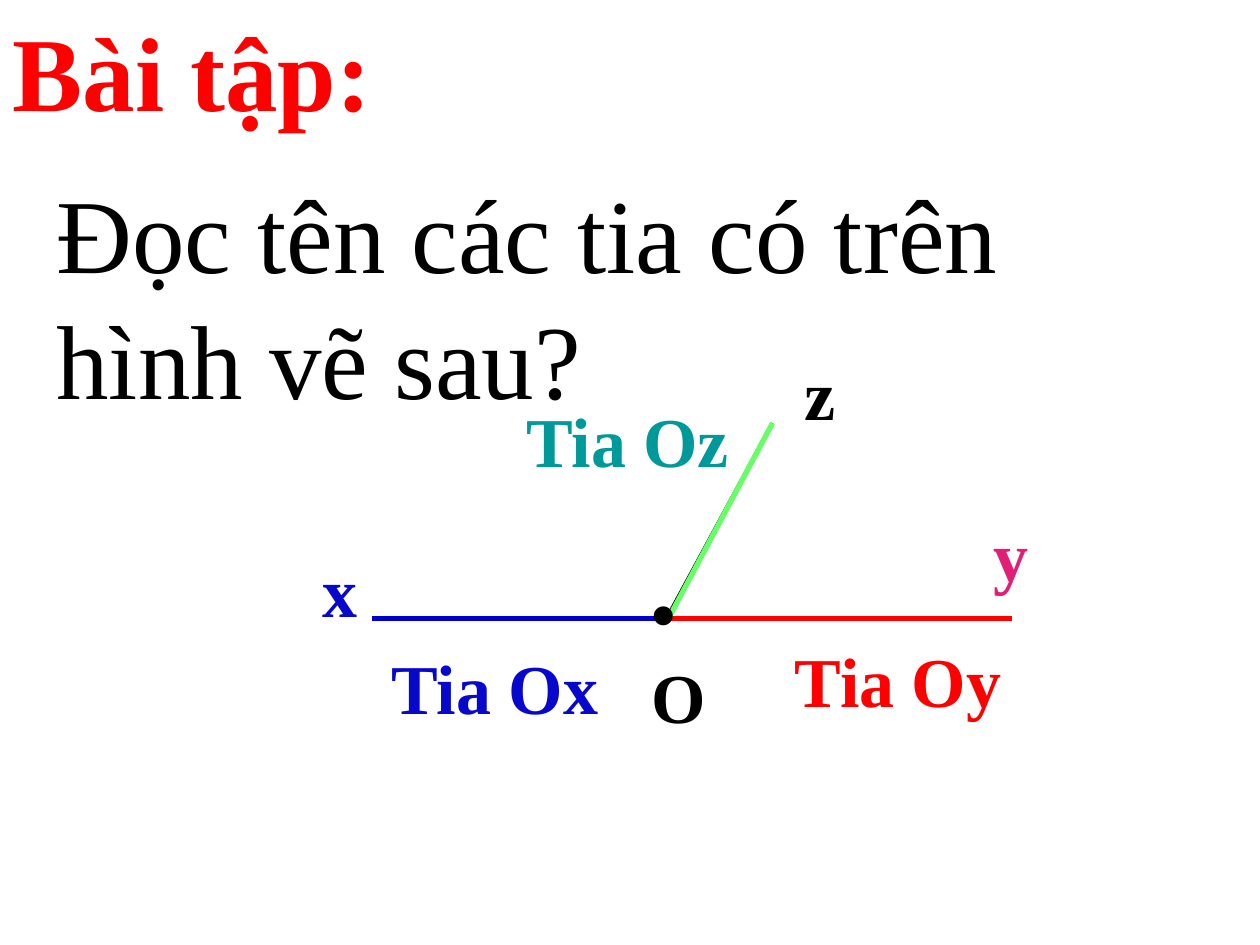
"""Build the geometry exercise slide about naming the rays Ox, Oy and Oz."""
from lxml import etree
from pptx import Presentation
from pptx.dml.color import RGBColor
from pptx.enum.shapes import MSO_CONNECTOR
from pptx.enum.text import MSO_ANCHOR, MSO_AUTO_SIZE, PP_ALIGN
from pptx.oxml.ns import qn
from pptx.util import Inches, Pt

BLACK = RGBColor(0x00, 0x00, 0x00)
WHITE = RGBColor(0xFF, 0xFF, 0xFF)
RED = RGBColor(0xFF, 0x00, 0x00)
BLUE = RGBColor(0x08, 0x07, 0xCC)
RAY_BLUE = RGBColor(0x00, 0x00, 0xCC)
PINK = RGBColor(0xE1, 0x1F, 0x77)
TEAL = RGBColor(0x00, 0x99, 0x99)
GREEN = RGBColor(0x66, 0xFF, 0x66)


def write(sp, lines, size, color, bold=True, wrap=True, anchor=MSO_ANCHOR.MIDDLE):
    tf = sp.text_frame
    frame_format = {"word_wrap": wrap, "vertical_anchor": anchor,
                    "auto_size": MSO_AUTO_SIZE.SHAPE_TO_FIT_TEXT}
    for name, value in frame_format.items():
        setattr(tf, name, value)
    tf.text = "\n".join(lines)
    font_format = {"name": "Times New Roman", "size": Pt(size), "bold": bold}
    for p in tf.paragraphs:
        p.alignment = PP_ALIGN.LEFT
        for r in p.runs:
            for name, value in font_format.items():
                setattr(r.font, name, value)
            r.font.color.rgb = color


prs = Presentation()
prs.slide_width, prs.slide_height = Inches(10), Inches(7.5)
s = prs.slides.add_slide(prs.slide_layouts[5])

title = s.shapes.title
title_box = {"left": 0, "top": 0, "width": 4.37, "height": 1.11}
for name, value in title_box.items():
    setattr(title, name, Inches(value))
title.fill.solid()
title.fill.fore_color.rgb = WHITE
write(title, ["Bài tập:"], 60, RED, anchor=MSO_ANCHOR.TOP)

rays = [
    (3.01, 4.91, 8.03, 4.91, BLACK, 2.25),
    (5.28, 4.93, 6.13, 3.36, BLACK, 2.25),
    (2.95, 4.91, 5.79, 4.91, RAY_BLUE, 3),
    (5.28, 4.91, 8.03, 4.91, RED, 3),
    (5.31, 4.9, 6.13, 3.36, GREEN, 3),
]
for x1, y1, x2, y2, color, width in rays:
    ray = s.shapes.add_connector(
        MSO_CONNECTOR.STRAIGHT, Inches(x1), Inches(y1), Inches(x2), Inches(y2))
    ray.line.color.rgb = color
    ray.line.width = Pt(width)
    etree.SubElement(ray._element.spPr, qn("a:effectLst"))

labels = [
    ("x", 2.46, 4.29, 0.48, BLUE),
    ("y", 7.79, 4.01, 0.48, PINK),
    ("z", 6.29, 2.73, 0.45, BLACK),
    ("Tia Ox", 3.01, 5.06, 1.86, BLUE),
    ("Tia Oy", 6.21, 5.01, 1.86, RED),
    ("Tia Oz", 4.08, 3.1, 1.83, TEAL),
]
for text, left, top, width, color in labels:
    label = s.shapes.add_textbox(Inches(left), Inches(top), Inches(width), Inches(0.77))
    write(label, [text], 40, color, wrap=False)

origin = s.shapes.add_textbox(Inches(5.07), Inches(4.46), Inches(0.5), Inches(1.45))
write(origin, ["•", "O"], 40, BLACK)

question = s.shapes.add_textbox(Inches(0.35), Inches(1.29), Inches(9.06), Inches(2.12))
write(question, ["Đọc tên các tia có trên hình vẽ sau?"], 60, BLACK, bold=False,
      anchor=MSO_ANCHOR.TOP)
question.text_frame.paragraphs[0].space_before = Pt(30)

prs.save("out.pptx")
